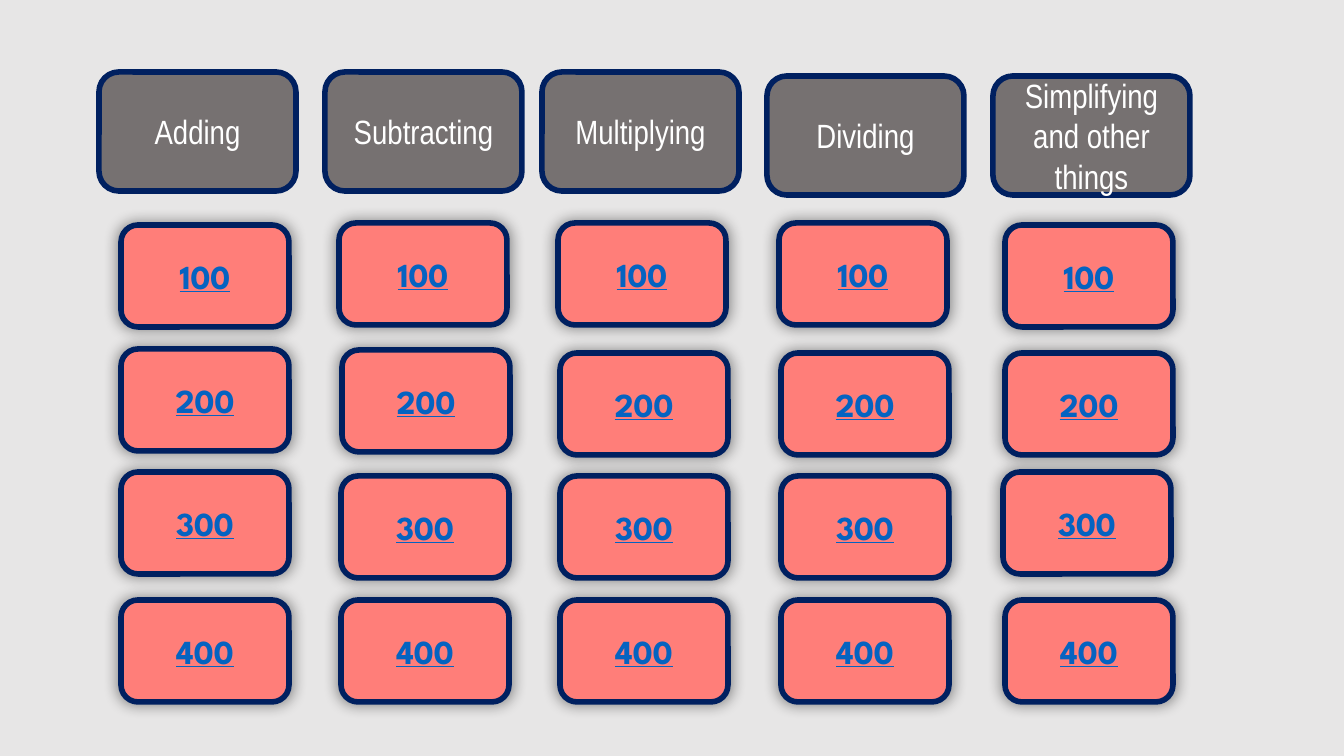
"""Build a quiz board slide with five topics and four point values each."""
from lxml.etree import SubElement
from pptx import Presentation
from pptx.dml.color import RGBColor
from pptx.enum.shapes import MSO_SHAPE as Shape
from pptx.enum.text import MSO_ANCHOR as Anchor, PP_ALIGN as Align
from pptx.oxml.ns import qn
from pptx.util import Pt

PX = 914400 / 100.8
BACKGROUND = RGBColor(0xE7, 0xE6, 0xE6)
GRAY = RGBColor(0x76, 0x71, 0x71)
NAVY = RGBColor(0x00, 0x20, 0x60)
CORAL = RGBColor(0xFF, 0x7E, 0x79)
WHITE = RGBColor(0xFF, 0xFF, 0xFF)
LINK_BLUE = RGBColor(0x05, 0x63, 0xC1)

HEADER_SIZE = (197, 119)
CARD_SIZE = (168, 102)
POINTS = ["100", "200", "300", "400"]
TOPICS = [
    ("Adding", (99, 72), [(121, 225), (121, 349), (121, 472), (121, 600)]),
    ("Subtracting", (325, 72), [(339, 223), (342, 350), (341, 476), (341, 600)]),
    ("Multiplying", (542, 72), [(558, 223), (560, 353), (560, 476), (560, 600)]),
    ("Dividing", (767, 76), [(779, 223), (781, 353), (781, 476), (781, 600)]),
    ("Simplifying and other things", (993, 76),
     [(1005, 225), (1005, 353), (1003, 472), (1005, 600)]),
]

deck = Presentation()
deck.slide_width, deck.slide_height = round(1344 * PX), round(756 * PX)
page = deck.slides.add_slide(deck.slide_layouts[6])
page.background.fill.solid()
page.background.fill.fore_color.rgb = BACKGROUND


def add_box(text, *, place, size, fill, color, font, bold=False, underline=False):
    """Add a rounded box with centred text and return it."""
    box = page.shapes.add_shape(
        Shape.ROUNDED_RECTANGLE, *(round(length * PX) for length in place + size))
    box.shadow.inherit = False
    box.fill.solid()
    box.fill.fore_color.rgb = fill
    box.line.color.rgb = NAVY
    box.line.width = Pt(4)
    frame = box.text_frame
    frame.word_wrap = True
    frame.vertical_anchor = Anchor.MIDDLE
    para = frame.paragraphs[0]
    para.alignment = Align.CENTER
    span = para.add_run()
    span.text = text
    span.font.name = font
    span.font.size = Pt(24)
    span.font.bold = bold
    span.font.underline = underline
    span.font.color.rgb = color
    return box


def add_soft_shadow(box):
    """Give the box an even, blurred shadow on all sides."""
    effects = box._element.spPr.find(qn("a:effectLst"))
    shadow = SubElement(effects, qn("a:outerShdw"), blurRad=str(Pt(10)),
                        sx="102000", sy="102000", algn="ctr", rotWithShape="0")
    black = SubElement(shadow, qn("a:prstClr"), val="black")
    SubElement(black, qn("a:alpha"), val="40000")


for topic, header_place, card_places in TOPICS:
    add_box(topic, place=header_place, size=HEADER_SIZE, fill=GRAY, color=WHITE,
            font="Arial Narrow")
    for points, card_place in zip(POINTS, card_places):
        card = add_box(points, place=card_place, size=CARD_SIZE, fill=CORAL,
                       color=LINK_BLUE, font="League Spartan", bold=True, underline=True)
        add_soft_shadow(card)

deck.save("out.pptx")
